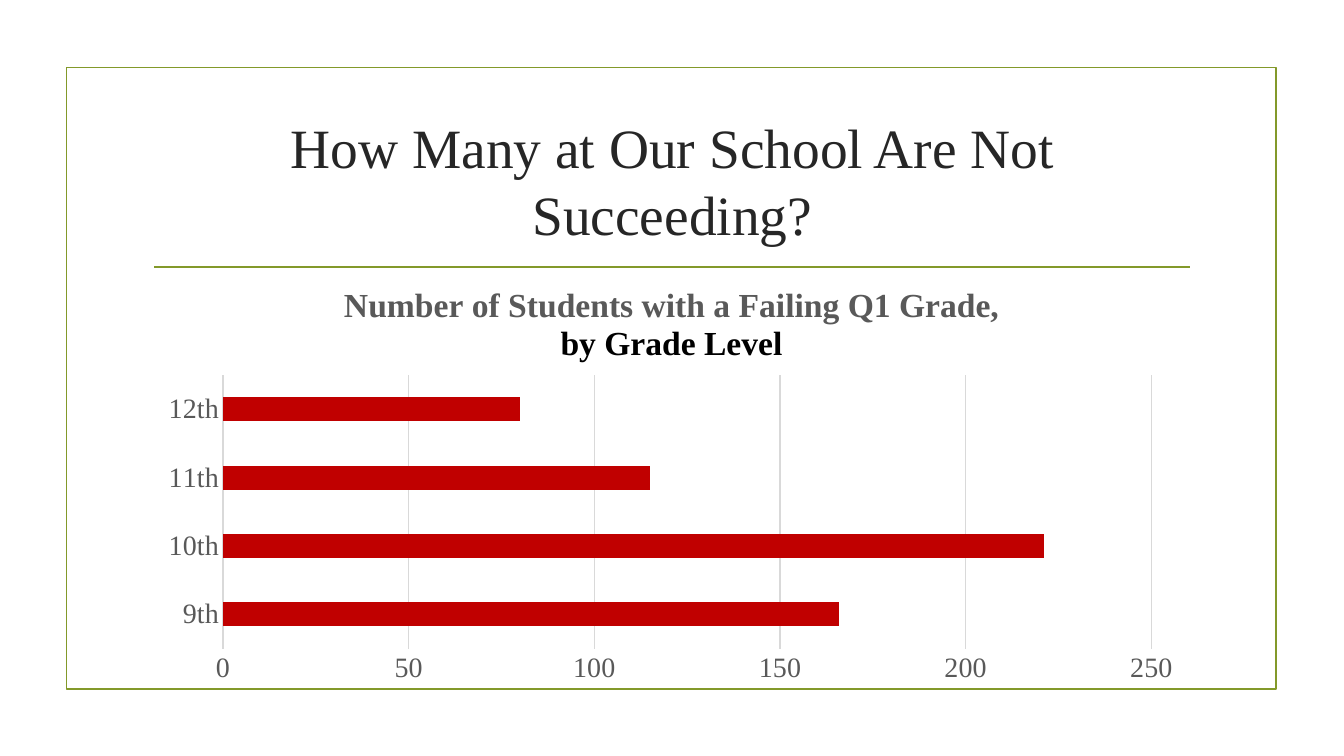
from lxml.etree import SubElement
from pptx import Presentation
from pptx.chart.data import CategoryChartData
from pptx.dml.color import RGBColor
from pptx.enum.chart import XL_CHART_TYPE, XL_TICK_MARK
from pptx.enum.shapes import MSO_CONNECTOR, MSO_SHAPE
from pptx.enum.text import MSO_ANCHOR, MSO_AUTO_SIZE, PP_ALIGN
from pptx.oxml.ns import qn
from pptx.util import Cm, Pt

TITLE = "How Many at Our School Are Not Succeeding?"
FAILING_BY_GRADE = {"9th": 166, "10th": 221, "11th": 115, "12th": 80}
FONT = "Times New Roman"
GREEN = RGBColor(0x83, 0x99, 0x2A)
RED = RGBColor(0xC0, 0x00, 0x00)
INK = RGBColor(0x26, 0x26, 0x26)
BLACK = RGBColor(0x00, 0x00, 0x00)
GREY = RGBColor(0x59, 0x59, 0x59)
PALE_GREY = RGBColor(0xD9, 0xD9, 0xD9)
CHART_TITLE = [
    ("Number of Students with a Failing Q1 Grade,", GREY),
    ("by Grade Level", BLACK),
]
PLOT_AREA = {"x": 0.07, "y": 0.25, "w": 0.89, "h": 0.64}


def style_font(font, size, color, bold=False):
    font.name = FONT
    font.size = Pt(size)
    font.bold = bold
    font.color.rgb = color


def style_line(line, color, width):
    line.color.rgb = color
    line.width = Pt(width)


def add_frame(page):
    frame = page.shapes.add_shape(
        MSO_SHAPE.RECTANGLE, Cm(1.68), Cm(1.7), Cm(30.48), Cm(15.67))
    frame.shadow.inherit = False
    frame.fill.background()
    style_line(frame.line, GREEN, 1.25)
    rule = page.shapes.add_connector(
        MSO_CONNECTOR.STRAIGHT, Cm(3.89), Cm(6.73), Cm(30), Cm(6.73))
    SubElement(rule.element.spPr, qn("a:effectLst"))
    style_line(rule.line, GREEN, 1.25)


def fill_title(box):
    box.left, box.top, box.width, box.height = Cm(3.61), Cm(2.72), Cm(26.67), Cm(3.63)
    frame = box.text_frame
    frame.text = TITLE
    frame.word_wrap = True
    frame.auto_size = MSO_AUTO_SIZE.NONE
    frame.vertical_anchor = MSO_ANCHOR.MIDDLE
    frame.paragraphs[0].alignment = PP_ALIGN.CENTER
    style_font(frame.paragraphs[0].font, 39.6, INK)


def place_plot(chart):
    plot_area = chart.plots[0]._element.getparent()
    layout = plot_area.find(qn("c:layout"))
    if layout is None:
        layout = SubElement(plot_area, qn("c:layout"))
        plot_area.insert(0, layout)
    manual = SubElement(layout, qn("c:manualLayout"))
    settings = {"layoutTarget": "inner", "xMode": "edge", "yMode": "edge", **PLOT_AREA}
    for name, value in settings.items():
        SubElement(manual, qn(f"c:{name}")).set("val", str(value))


def add_grade_chart(page):
    data = CategoryChartData()
    data.categories = list(FAILING_BY_GRADE)
    data.add_series("Series 1", list(FAILING_BY_GRADE.values()))
    chart = page.shapes.add_chart(
        XL_CHART_TYPE.BAR_CLUSTERED, Cm(3.78), Cm(6.76), Cm(26.29), Cm(10.77), data).chart
    style_font(chart.font, 10, BLACK)
    chart.has_legend = False

    frame = chart.chart_title.text_frame
    for index, (text, color) in enumerate(CHART_TITLE):
        para = frame.add_paragraph() if index else frame.paragraphs[0]
        para.text = text
        para.alignment = PP_ALIGN.CENTER
        style_font(para.font, 24, color, bold=True)
    chart.chart_title.include_in_layout = False

    plot = chart.plots[0]
    plot.gap_width = 182
    plot.vary_by_categories = False
    bars = plot.series[0].format
    bars.fill.solid()
    bars.fill.fore_color.rgb = RED

    grades, counts = chart.category_axis, chart.value_axis
    for axis in (grades, counts):
        axis.major_tick_mark = axis.minor_tick_mark = XL_TICK_MARK.NONE
        style_font(axis.tick_labels.font, 20, GREY)
    style_line(grades.format.line, PALE_GREY, 0.75)
    counts.format.line.fill.background()
    counts.minimum_scale, counts.maximum_scale, counts.major_unit = 0, 250, 50
    style_line(counts.major_gridlines.format.line, PALE_GREY, 0.75)
    place_plot(chart)


def main():
    """Build the slide on failing grades by grade level."""
    deck = Presentation()
    deck.slide_width, deck.slide_height = Cm(33.87), Cm(19.05)
    page = deck.slides.add_slide(deck.slide_layouts[5])
    add_frame(page)
    fill_title(page.shapes.title)
    add_grade_chart(page)
    deck.save("out.pptx")


if __name__ == "__main__":
    main()
